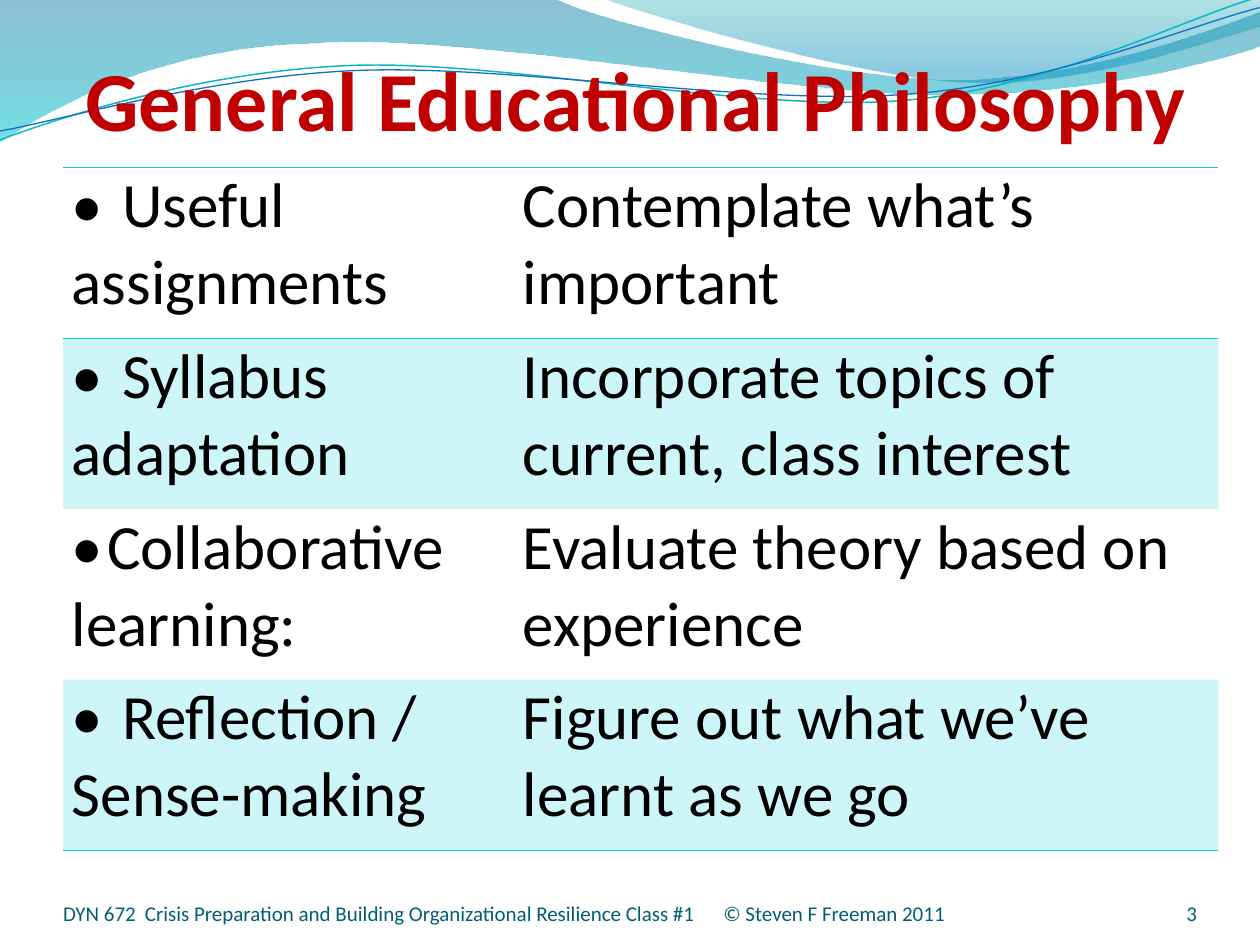
import math

import pptx
import pptx.dml.color
import pptx.enum.text
import pptx.oxml
import pptx.oxml.ns
import pptx.util

Inches, Pt = pptx.util.Inches, pptx.util.Pt
RGBColor = pptx.dml.color.RGBColor
PP_ALIGN = pptx.enum.text.PP_ALIGN
MSO_ANCHOR = pptx.enum.text.MSO_ANCHOR
qn = pptx.oxml.ns.qn

# Content
TITLE = "General Educational Philosophy"
ROWS = [  # topic, gap after the bullet (inches), purpose
    ("Useful assignments", 0.4, "Contemplate what’s important"),
    ("Syllabus adaptation", 0.4, "Incorporate topics of current, class interest"),
    ("Collaborative learning:", 0.28, "Evaluate theory based on experience"),
    ("Reflection / Sense-making", 0.4, "Figure out what we’ve learnt as we go"),
]
FOOTER = ("DYN 672\tCrisis Preparation and Building Organizational Resilience "
          "Class #1\t© Steven F Freeman 2011")
FOOTER_TABS = [0.65, 5.24]
PAGE_NUMBER = "3"

# Style
FONT = "Calibri"
RED = RGBColor(0xC0, 0x00, 0x00)
BLACK = RGBColor(0x00, 0x00, 0x00)
TEAL = RGBColor(0x04, 0x5D, 0x75)
CYAN = RGBColor(0x0B, 0xD0, 0xD9)
WAVE_CYAN = RGBColor(0x0A, 0xB8, 0xBF)
WAVE_BLUE = RGBColor(0x0F, 0x6F, 0xC6)
BAND_OPACITY = 20
NO_STYLE = "{2D5ABB26-0587-4C30-8999-92F81FD0307C}"

# Layout in inches
MARGIN = 0.5
TABLE_TOP, ROW_HEIGHT = 1.33, 1.355
COLUMNS = [3.58, 5.59]
FOOTER_TOP, FOOTER_HEIGHT = 6.95, 0.4

# Wave outlines: two numbers make a straight step, six make a Bézier step
WAVE_FILLS = [  # steps, gradient stops (percent, colour, opacity)
    ([(0, 0), (4.4, -0.01), (4.76, 0.17, 6.64, 0.63, 7.58, 0.63),
      (8.53, 0.63, 9.58, 0.26, 10, 0.09), (10.01, 0.36),
      (9.83, 0.44, 8.7, 0.76, 7.46, 0.75), (6.22, 0.75, 3.82, 0.28, 2.57, 0.34),
      (1.29, 0.36, 0.46, 0.83, -0.01, 1.13)],
     [(0, RGBColor(0x00, 0x74, 0xA1), 45), (100, RGBColor(0x00, 0xC6, 0xCF), 55)]),
    ([(4.79, -0.01), (5.09, 0.11, 6.82, 0.62, 7.69, 0.65),
      (8.56, 0.69, 9.61, 0.32, 10, 0.21), (10, 0)],
     [(0, RGBColor(0x00, 0xA1, 0xA9), 30), (80, RGBColor(0x00, 0x8B, 0xBF), 45)]),
]
WAVE_LINES = [  # steps as they appear once turned, centre, colour, width
    ([(0, 1.11), (0.48, 0.93, 1.58, 0.57, 2.77, 0.52),
      (3.95, 0.47, 5.93, 0.89, 7.13, 0.8), (8.33, 0.71, 9.38, 0.15, 9.98, -0.02)],
     (4.99, 0.58), WAVE_CYAN, 0.85),
    ([(0, 1.04), (0.47, 0.96, 1.64, 0.61, 2.83, 0.56),
      (4.03, 0.51, 5.97, 0.84, 7.17, 0.75), (8.36, 0.67, 9.41, 0.21, 10, 0.06)],
     (5, 0.59), WAVE_BLUE, 0.75),
]
LINE_TURN = 357.3


def add_xml(parent, xml, index=None):
    element = pptx.oxml.parse_xml(xml.replace(
        ">", f' {pptx.oxml.ns.nsdecls("a")}>', 1))
    parent.insert(len(parent) if index is None else index, element)
    return element


def turn(point, centre, degrees):
    angle = math.radians(degrees)
    x, y = point[0] - centre[0], point[1] - centre[1]
    return (centre[0] + x * math.cos(angle) - y * math.sin(angle),
            centre[1] + x * math.sin(angle) + y * math.cos(angle))


def add_wave(slide, steps, close, centre=(0, 0), rotation=0):
    """Draw through all points, then join each Bézier step's three into a curve."""
    points = [turn(step[at:at + 2], centre, -rotation)
              for step in steps for at in range(0, len(step), 2)]
    corners = [(Inches(x), Inches(y)) for x, y in points]
    builder = slide.shapes.build_freeform(*corners[0])
    builder.add_line_segments(corners[1:], close=close)
    wave = builder.convert_to_shape()
    wave.shadow.inherit = False
    wave.rotation = rotation
    outline = wave._element.find(".//" + qn("a:path"))
    segments = iter(outline.findall(qn("a:lnTo")))
    for step in steps[1:]:
        segment = next(segments)
        if len(step) == 6:
            curve = add_xml(outline, "<a:cubicBezTo></a:cubicBezTo>", outline.index(segment))
            for part in (segment, next(segments), next(segments)):
                curve.append(part[0])
                outline.remove(part)
    return wave


def style_text(para, size, color, bold=None):
    para.font.name, para.font.size, para.font.bold = FONT, Pt(size), bold
    para.font.color.rgb = color


def set_tabs(para, stops):
    tabs = "".join(f'<a:tab pos="{Inches(stop)}" algn="l"/>' for stop in stops)
    add_xml(para._p.get_or_add_pPr(), f"<a:tabLst>{tabs}</a:tabLst>", 0)


def set_bullet(para, gap):
    set_tabs(para, [gap])
    properties = para._p.get_or_add_pPr()
    properties.set("marL", "0")
    properties.set("indent", "0")
    add_xml(properties, '<a:buChar char="•"></a:buChar>', 0)
    add_xml(properties, f'<a:buFont typeface="{FONT}"></a:buFont>', 0)


def set_borders(cell, drawn):
    for side in ("lnL", "lnR", "lnT", "lnB"):
        paint = "<a:noFill/>"
        if side in drawn:
            paint = (f'<a:solidFill><a:srgbClr val="{CYAN}"/></a:solidFill>'
                     '<a:prstDash val="solid"/>')
        add_xml(cell._tc.get_or_add_tcPr(),
                f'<a:{side} w="{Pt(1)}" cap="flat" cmpd="sng" algn="ctr">{paint}</a:{side}>')


def fill_cell(cell, banded):
    if not banded:
        cell.fill.background()
        return
    cell.fill.solid()
    cell.fill.fore_color.rgb = CYAN
    color = cell._tc.tcPr.find(qn("a:solidFill"))[0]
    add_xml(color, f'<a:alpha val="{BAND_OPACITY * 1000}"></a:alpha>')


def add_footer(slide, text, left, width, align):
    box = slide.shapes.add_textbox(Inches(left), Inches(FOOTER_TOP),
                                   Inches(width), Inches(FOOTER_HEIGHT))
    frame = box.text_frame
    frame.word_wrap = True
    frame.vertical_anchor = MSO_ANCHOR.BOTTOM
    frame.margin_left = frame.margin_right = frame.margin_top = frame.margin_bottom = 0
    para = frame.paragraphs[0]
    para.text, para.alignment = text, align
    style_text(para, 12, TEAL)
    return para


def main():
    deck = pptx.Presentation()
    deck.slide_width, deck.slide_height = Inches(10), Inches(7.5)
    slide = deck.slides.add_slide(deck.slide_layouts.get_by_name("Title Only"))

    # Waves behind the title
    for steps, stops in WAVE_FILLS:
        wave = add_wave(slide, steps, close=True)
        wave.line.fill.background()
        marks = "".join(
            f'<a:gs pos="{at * 1000}"><a:srgbClr val="{color}">'
            f'<a:alpha val="{opacity * 1000}"/></a:srgbClr></a:gs>'
            for at, color, opacity in stops)
        properties = wave._element.spPr
        add_xml(properties, f"<a:gradFill><a:gsLst>{marks}</a:gsLst>"
                '<a:lin ang="5400000" scaled="0"/></a:gradFill>',
                properties.index(properties.find(qn("a:ln"))))
    for steps, centre, color, width in WAVE_LINES:
        wave = add_wave(slide, steps, False, centre, LINE_TURN)
        wave.fill.background()
        wave.line.color.rgb, wave.line.width = color, Pt(width)

    # Title, brought in front of the waves
    title = slide.shapes.title
    title.left, title.top = Inches(0.42), Inches(0.25)
    title.width, title.height = Inches(9.25), Inches(1)
    frame = title.text_frame
    frame.margin_left = frame.margin_right = frame.margin_bottom = 0
    frame.margin_top = Inches(0.05)
    frame.vertical_anchor = MSO_ANCHOR.MIDDLE
    frame.text = TITLE
    frame.paragraphs[0].alignment = PP_ALIGN.CENTER
    style_text(frame.paragraphs[0], 48, RED, bold=True)
    slide.shapes._spTree.append(title._element)

    # Table
    table = slide.shapes.add_table(
        len(ROWS), len(COLUMNS), Inches(MARGIN), Inches(TABLE_TOP),
        Inches(sum(COLUMNS)), Inches(ROW_HEIGHT * len(ROWS))).table
    table.first_row = table.horz_banding = False
    table._tbl.tblPr.find(qn("a:tableStyleId")).text = NO_STYLE
    for column, width in zip(table.columns, COLUMNS):
        column.width = Inches(width)
    borders = {0: ("lnT", "lnB"), 1: ("lnT",), len(ROWS) - 1: ("lnB",)}
    for row, (topic, gap, purpose) in enumerate(ROWS):
        for column, text in enumerate(("\t" + topic, purpose)):
            cell = table.cell(row, column)
            cell.margin_left = cell.margin_right = Inches(0.07)
            cell.margin_top = cell.margin_bottom = 0
            para = cell.text_frame.paragraphs[0]
            para.text = text
            style_text(para, 36, BLACK)
            if column == 0:
                set_bullet(para, gap)
            set_borders(cell, borders.get(row, ()))
            fill_cell(cell, banded=row % 2 == 1)

    # Footer and page number
    add_footer(slide, PAGE_NUMBER, 8.67, 0.83, PP_ALIGN.RIGHT)
    set_tabs(add_footer(slide, FOOTER, MARGIN, 8.08, PP_ALIGN.LEFT), FOOTER_TABS)

    deck.save("out.pptx")


if __name__ == "__main__":
    main()
